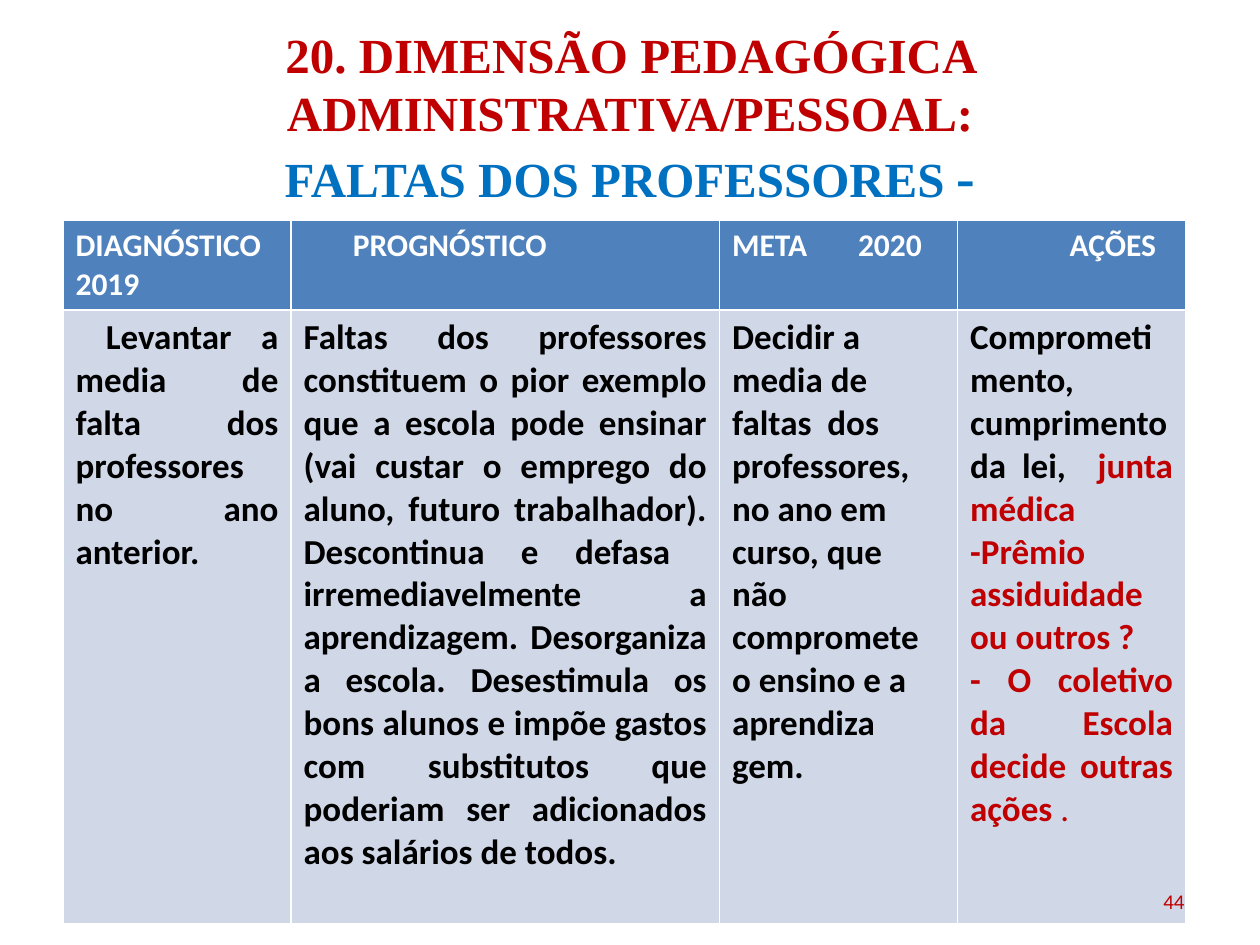
from lxml.etree import SubElement
from pptx import Presentation
from pptx.dml.color import RGBColor
from pptx.enum.text import MSO_ANCHOR as Anchor, MSO_AUTO_SIZE as Auto, PP_ALIGN as Align
from pptx.oxml.ns import qn
from pptx.util import Inches, Pt

RED, BLUE, WHITE, BLACK = "C00000", "0070C0", "FFFFFF", "000000"


def tint(hue):
    return RGBColor.from_string(hue)


def style(font, size, hue, bold=True, name="Calibri"):
    font.name, font.size, font.bold = name, Pt(size), bold
    font.color.rgb = tint(hue)


deck = Presentation()
deck.slide_width, deck.slide_height = Inches(10), Inches(7.5)
slide = deck.slides.add_slide(deck.slide_layouts[5])

title = slide.shapes.title
title.left, title.top = Inches(0.5), Inches(0.3)
title.width, title.height = Inches(9), Inches(1.25)
frame = title.text_frame
frame.auto_size = Auto.NONE
frame.vertical_anchor = Anchor.MIDDLE
head = frame.paragraphs[0]
head.alignment = Align.CENTER
for text, size, hue in [
    ("20. DIMENSÃO PEDAGÓGICA ADMINISTRATIVA/PESSOAL:", 28, RED),
    ("FALTAS DOS PROFESSORES ", 28, BLUE),
    ("-", 32, BLUE),
]:
    run = head.add_run()
    run.text = text
    style(run.font, size, hue, name="Times New Roman")
    if hue == RED:
        head.add_line_break()

wide = [1.81, 3.4, 1.89, 1.81]
high = [0.7, 4.87]
table = slide.shapes.add_table(
    2, 4, Inches(0.5), Inches(1.75), Inches(sum(wide)), Inches(sum(high))
).table
for col, size in zip(table.columns, wide):
    col.width = Inches(size)
for row, size in zip(table.rows, high):
    row.height = Inches(size)

heads = [("DIAGNÓSTICO 2019", 0), ("PROGNÓSTICO", 0.39), ("META\t2020", 0), ("AÇÕES", 0.79)]
for cell, (text, inset) in zip(table.rows[0].cells, heads):
    cell.fill.solid()
    cell.fill.fore_color.rgb = tint("4F81BD")
    cell.text = text
    para = cell.text_frame.paragraphs[0]
    style(para.font, 18, WHITE)
    prop = para._p.get_or_add_pPr()
    prop.set("indent", str(Inches(inset)))
    if "\t" in text:
        stops = prop.makeelement(qn("a:tabLst"), {})
        prop.insert(0, stops)
        SubElement(stops, qn("a:tab"), pos=str(Inches(0.99)), algn="l")

body = [
    (["Levantar a media de falta dos professores no ano anterior."], Align.JUSTIFY),
    (["Faltas dos professores constituem o pior exemplo que a escola pode ensinar "
      "(vai custar o emprego do aluno, futuro trabalhador). Descontinua e defasa  "
      "irremediavelmente  a aprendizagem. Desorganiza a escola. Desestimula os bons "
      "alunos e impõe gastos com substitutos que poderiam ser adicionados aos "
      "salários de todos."], Align.JUSTIFY),
    (["Decidir a media de faltas  dos professores, no ano em curso, que não "
      "compromete o ensino e a aprendiza", "gem."], Align.LEFT),
    (["Comprometimento, cumprimento da lei,  |junta médica",
      "-Prêmio assiduidade ou outros ?",
      "- O coletivo da Escola decide outras ações| ."], Align.JUSTIFY),
]
for cell, (lines, align) in zip(table.rows[1].cells, body):
    cell.fill.solid()
    cell.fill.fore_color.rgb = tint("D0D8E8")
    cell.text = "\n".join(line.replace("|", "") for line in lines)
    for para, line in zip(cell.text_frame.paragraphs, lines):
        para.alignment = align
        style(para.font, 20, RED if line.startswith("-") else BLACK)
        if "|" in line:
            first, last = line.split("|")
            para.runs[0].text = first
            run = para.add_run()
            run.text = last
            style(run.font, 20, RED, last != " .")
first = table.cell(1, 0).text_frame.paragraphs[0]
first._p.get_or_add_pPr().set("indent", str(Inches(0.24)))

page = slide.shapes.add_textbox(Inches(7.17), Inches(6.95), Inches(2.33), Inches(0.4)).text_frame
page.word_wrap = True
page.vertical_anchor = Anchor.MIDDLE
page.text = "44"
para = page.paragraphs[0]
para.alignment = Align.RIGHT
style(para.font, 12, RED, False)

deck.save("out.pptx")
